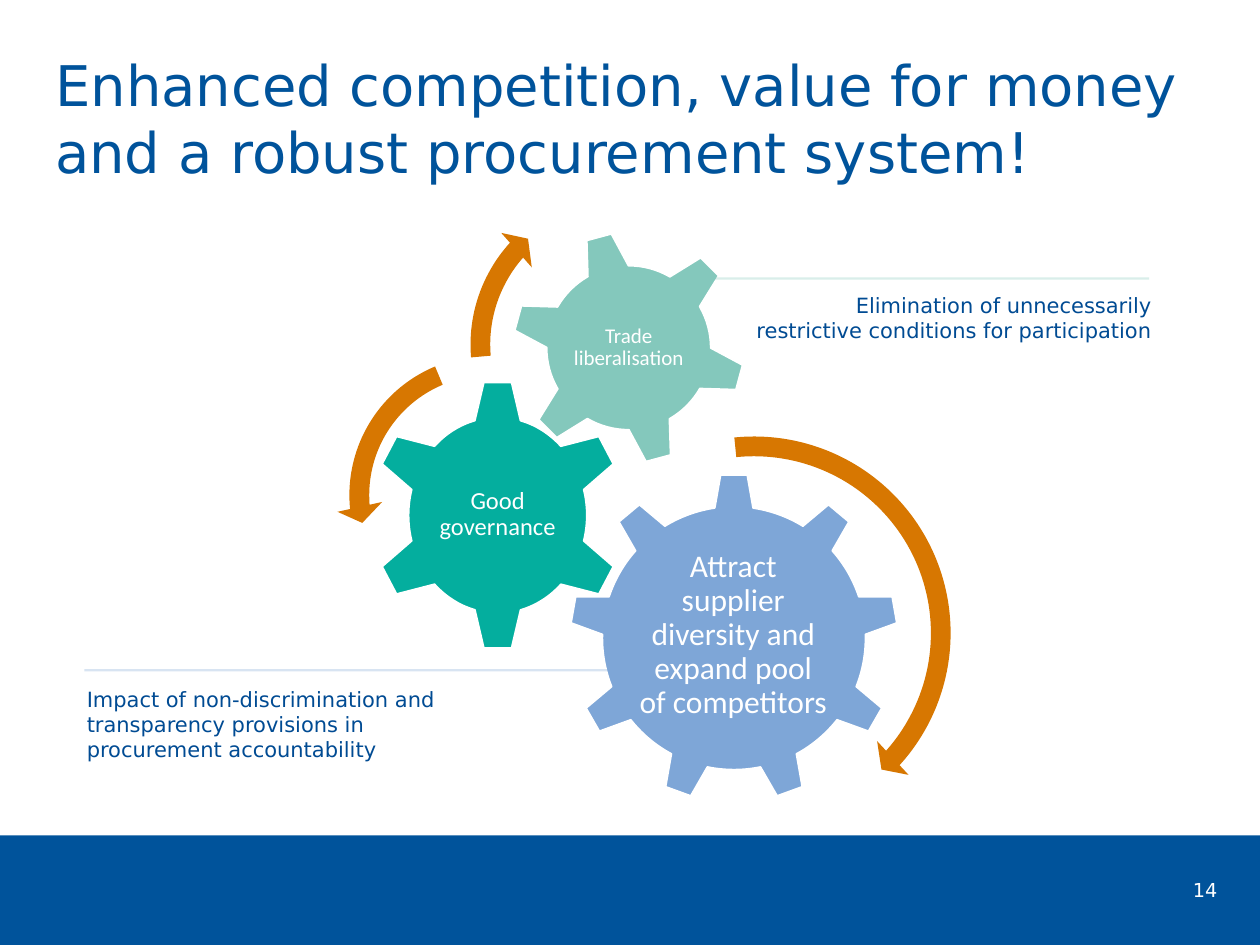
from lxml.etree import SubElement
from pptx import Presentation
from pptx.dml.color import RGBColor
from pptx.enum.shapes import MSO_CONNECTOR, MSO_SHAPE
from pptx.enum.text import MSO_ANCHOR, PP_ALIGN
from pptx.oxml.ns import qn
from pptx.util import Inches, Pt

BLUE = "00539B"
NOTE_BLUE = "004B93"
PALE_BLUE = "7EA6D7"
TEAL = "04AE9E"
PALE_TEAL = "84C8BC"
ORANGE = "D77701"
WHITE = "FFFFFF"
BODY_FONT = "DejaVu Sans"
GEAR_FONT = "Calibri"


def color(hex_string):
    return RGBColor.from_string(hex_string)


def add_filled(slide, kind, box, fill, outline=None, rotation=0):
    shape = slide.shapes.add_shape(kind, *map(Inches, box))
    shape.shadow.inherit = False
    shape.rotation = rotation
    shape.fill.solid()
    shape.fill.fore_color.rgb = color(fill)
    if outline:
        shape.line.color.rgb = color(outline)
        shape.line.width = Pt(1)
    else:
        shape.line.fill.background()
    return shape


def add_text(slide, box, text, size, text_color, align=PP_ALIGN.LEFT, font=BODY_FONT):
    label = slide.shapes.add_textbox(*map(Inches, box))
    frame = label.text_frame
    frame.word_wrap = True
    frame.text = text
    paragraph = frame.paragraphs[0]
    paragraph.alignment = align
    run_font = paragraph.runs[0].font
    run_font.name = font
    run_font.size = Pt(size)
    run_font.color.rgb = color(text_color)
    return frame


def add_gear(slide, kind, box, fill, text, text_box, size, inset, rotation=0):
    add_filled(slide, kind, box, fill, WHITE, rotation)
    frame = add_text(slide, text_box, text, size, WHITE, PP_ALIGN.CENTER, GEAR_FONT)
    frame.vertical_anchor = MSO_ANCHOR.MIDDLE
    frame.margin_left = frame.margin_right = Inches(inset)
    frame.margin_top = frame.margin_bottom = Inches(inset)
    frame.paragraphs[0].line_spacing = 0.9


def add_turning_arrow(slide, kind, left, top, size, adjustments):
    arrow = add_filled(slide, kind, (left, top, size, size), ORANGE)
    for index, value in enumerate(adjustments):
        arrow.adjustments[index] = value


def add_rule(slide, start, end, y, line_color):
    rule = slide.shapes.add_connector(
        MSO_CONNECTOR.STRAIGHT, Inches(start), Inches(y), Inches(end), Inches(y))
    rule.line.color.rgb = color(line_color)
    rule.line.width = Pt(1.25)
    # Make the rule 30% opaque and remove its shadow
    properties = rule.element.spPr
    rgb = properties.find(".//" + qn("a:srgbClr"))
    SubElement(rgb, qn("a:alpha"), val="30000")
    SubElement(properties, qn("a:effectLst"))


def main():
    presentation = Presentation()
    presentation.slide_width = Inches(10)
    presentation.slide_height = Inches(7.5)
    slide = presentation.slides.add_slide(presentation.slide_layouts[6])

    # Footer band
    add_filled(slide, MSO_SHAPE.RECTANGLE, (0, 6.63, 10.01, 0.87), BLUE)

    # Interlocking gears
    add_gear(slide, MSO_SHAPE.GEAR_9, (4.52, 3.76, 2.61, 2.61), PALE_BLUE,
             "Attract supplier diversity and expand pool of competitors",
             (5.04, 4.37, 1.56, 1.34), 18, 0.03)
    add_gear(slide, MSO_SHAPE.GEAR_6, (2.94, 3.01, 2.02, 2.16), TEAL,
             "Good governance", (3.45, 3.54, 1, 1.09), 14, 0.02)
    add_gear(slide, MSO_SHAPE.GEAR_6, (4.06, 1.83, 1.86, 1.86), PALE_TEAL,
             "Trade liberalisation", (4.47, 2.24, 1.04, 1.04), 12, 0.02, rotation=345)

    # Arrows showing which way each gear turns
    add_turning_arrow(slide, MSO_SHAPE.CIRCULAR_ARROW, 4.32, 3.36, 3.33,
                      (0.047, 2.99, 25.194, 158.544, 0.055))
    add_turning_arrow(slide, MSO_SHAPE.LEFT_CIRCULAR_ARROW, 2.67, 2.72, 2.42,
                      (0.065, 4.3, 104.891, 148.378, 0.075))
    add_turning_arrow(slide, MSO_SHAPE.CIRCULAR_ARROW, 3.63, 1.43, 2.61,
                      (0.06, 3.941, 133.138, 105.082, 0.07))

    # Notes beside the gears
    add_text(slide, (5.87, 2.27, 3.37, 0.5),
             "Elimination of unnecessarily restrictive conditions for participation",
             12, NOTE_BLUE, PP_ALIGN.RIGHT)
    add_text(slide, (0.59, 5.4, 3.39, 0.71),
             "Impact of non-discrimination and transparency provisions in "
             "procurement accountability", 12, NOTE_BLUE)

    # Slide number and title
    add_text(slide, (7.68, 6.92, 2.08, 0.29), "14", 11, WHITE, PP_ALIGN.RIGHT)
    add_text(slide, (0.34, 0.35, 9.66, 0.62),
             "Enhanced competition, value for money and a robust procurement system!",
             32, BLUE)

    # Rules linking the notes to the gears
    add_rule(slide, 5.63, 9.12, 2.21, PALE_TEAL)
    add_rule(slide, 0.67, 4.87, 5.32, PALE_BLUE)

    presentation.save("out.pptx")


if __name__ == "__main__":
    main()
